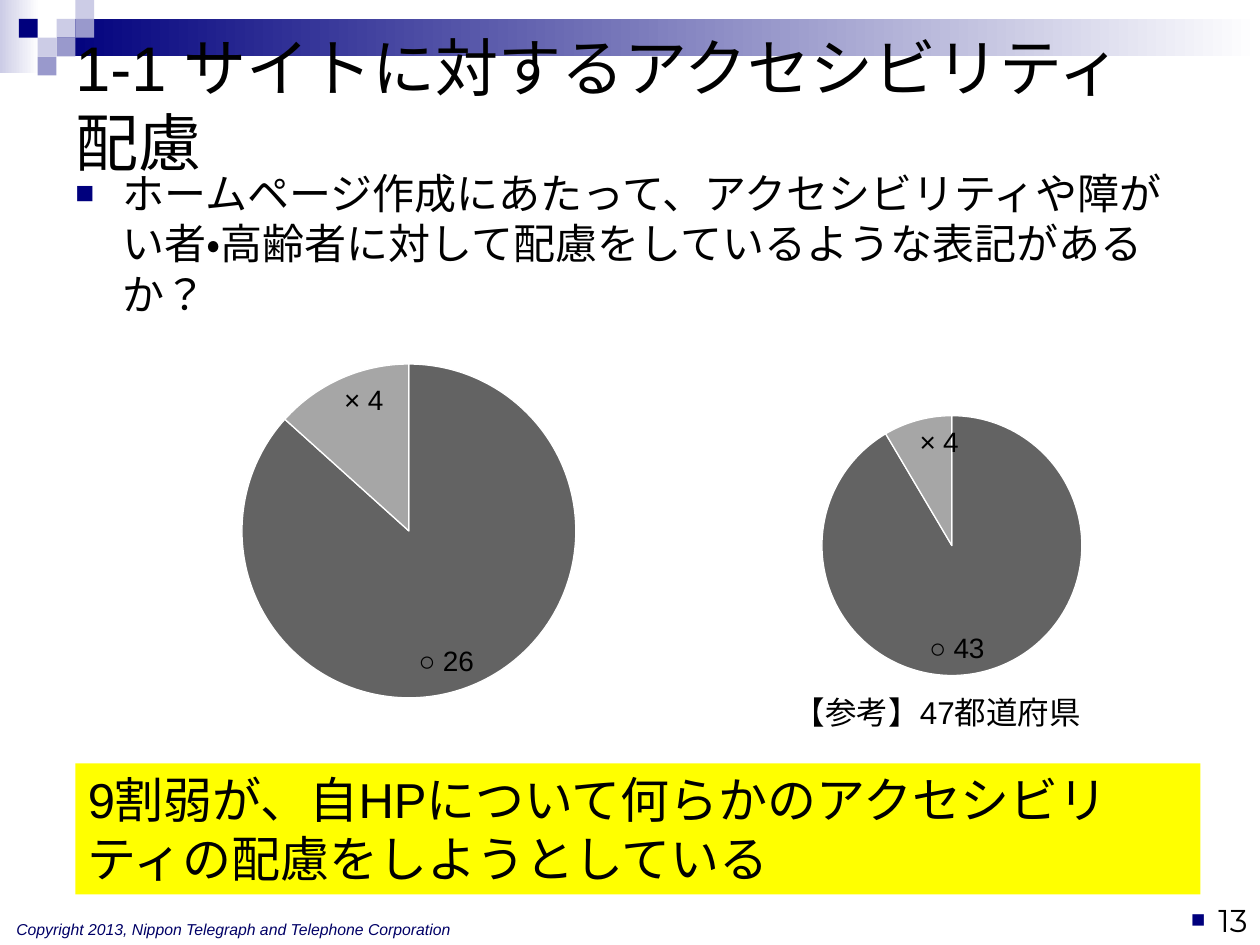
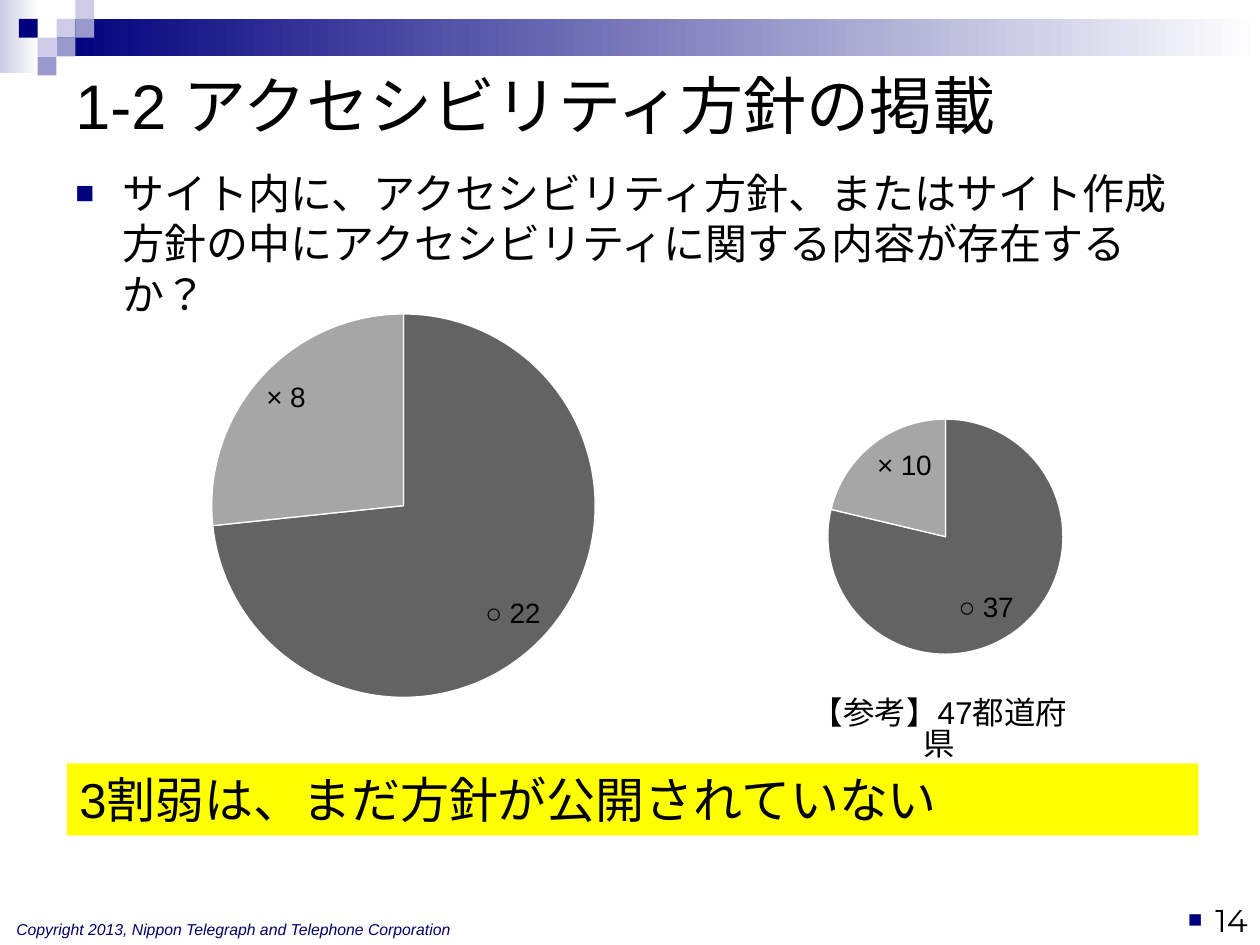
from lxml import etree
from pptx import Presentation
from pptx.chart.data import CategoryChartData
from pptx.dml.color import RGBColor
from pptx.enum.chart import XL_CHART_TYPE, XL_LABEL_POSITION
from pptx.enum.lang import MSO_LANGUAGE_ID
from pptx.enum.shapes import MSO_SHAPE
from pptx.enum.text import MSO_ANCHOR, PP_ALIGN
from pptx.oxml.ns import qn
from pptx.util import Cm, Pt

PIE = XL_CHART_TYPE.PIE
INSIDE_END = XL_LABEL_POSITION.INSIDE_END
JAPANESE = MSO_LANGUAGE_ID.JAPANESE
RECTANGLE = MSO_SHAPE.RECTANGLE
TOP, MIDDLE, BOTTOM = MSO_ANCHOR.TOP, MSO_ANCHOR.MIDDLE, MSO_ANCHOR.BOTTOM
LEFT, CENTER, RIGHT = PP_ALIGN.LEFT, PP_ALIGN.CENTER, PP_ALIGN.RIGHT

COLORS = {
    "black": "000000", "white": "FFFFFF", "navy": "00007D", "copyright": "000066",
    "violet": "9999CC", "pale": "CCCCE6", "yellow": "FFFF00",
    "yes": "636363", "no": "A6A6A6",
}
FORMATS = {
    "title": {"size": Pt(36), "name": "Arial", "language_id": JAPANESE},
    "question": {"size": Pt(24), "name": "Arial", "language_id": JAPANESE},
    "finding": {"size": Pt(28), "name": "Arial", "language_id": JAPANESE},
    "caption": {"size": Pt(18), "name": "Arial", "language_id": JAPANESE},
    "copyright": {"size": Pt(9), "name": "Arial", "italic": True},
    "number": {"size": Pt(18), "name": "Montserrat"},
    "label": {"size": Pt(16), "name": "Arial"},
}
COPYRIGHT = "Copyright 2013, Nippon Telegraph and Telephone Corporation"
CAPTION = "【参考】47都道府県"

# Corner mosaic: column, row, colour
TILE = 0.38
TILES = [(3, 1, "pale"), (4, 0, "pale"), (4, 1, "violet"), (2, 2, "pale"),
         (1, 1, "navy"), (3, 2, "violet"), (2, 3, "violet")]

# Boxes are left, top, width, height in cm; pies are left, top, diameter
SLIDES = [
    {"number": 13,
     "title": "1-1 サイトに対するアクセシビリティ配慮",
     "question": "ホームページ作成にあたって、アクセシビリティや障がい者・高齢者に対して配慮をしているような表記があるか？",
     "finding": "9割弱が、自HPについて何らかのアクセシビリティの配慮をしようとしている",
     "finding_box": (1.52, 15.39, 22.68, 2.64),
     "caption_box": (15.57, 14, 6.65, 0.86),
     "charts": [((14.22, 7.32, 9.93, 6.68), (16.57, 8.38, 5.24), (43, 4)),
                ((1.22, 6.38, 14.02, 8.05), (4.88, 7.34, 6.73), (26, 4))]},
    {"number": 14,
     "title": "1-2 アクセシビリティ方針の掲載",
     "question": "サイト内に、アクセシビリティ方針、またはサイト作成方針の中にアクセシビリティに関する内容が存在するか？",
     "finding": "3割弱は、まだ方針が公開されていない",
     "finding_box": (1.35, 15.39, 22.81, 1.45),
     "caption_box": (15.85, 14, 6.17, 0.86),
     "charts": [((14.12, 7.65, 9.91, 6.35), (16.69, 8.45, 4.74), (37, 10)),
                ((1.35, 5.97, 13.56, 8.46), (4.27, 6.33, 7.73), (22, 8))]},
]


def color(name):
    return RGBColor.from_string(COLORS[name])


def lengths(box):
    return [Cm(value) for value in box]


def add_element(parent, tag, **attributes):
    return etree.SubElement(parent, qn(tag), attributes)


class SurveyDeck:
    def __init__(self):
        self.deck = Presentation()
        self.deck.slide_width, self.deck.slide_height = Cm(25.4), Cm(19.05)
        self.page = None

    def new_page(self):
        self.page = self.deck.slides.add_slide(self.deck.slide_layouts[6])

    def style(self, font, kind, color_name="black"):
        for attribute, value in FORMATS[kind].items():
            setattr(font, attribute, value)
        font.color.rgb = color(color_name)

    def rectangle(self, box, fill, fade=False):
        shape = self.page.shapes.add_shape(RECTANGLE, *lengths(box))
        shape.shadow.inherit = False
        shape.line.fill.background()
        if fade:
            shape.fill.gradient()
            shape.fill.gradient_angle = 0
            for stop, name in zip(shape.fill.gradient_stops, (fill, "white")):
                stop.color.rgb = color(name)
        else:
            shape.fill.solid()
            shape.fill.fore_color.rgb = color(fill)
        return shape

    def fill_text(self, shape, text, kind, color_name="black", align=LEFT, anchor=TOP):
        frame = shape.text_frame
        frame.word_wrap = True
        frame.vertical_anchor = anchor
        para = frame.paragraphs[0]
        para.alignment = align
        span = para.add_run()
        span.text = text
        self.style(span.font, kind, color_name)
        return para

    def text(self, box, *content, **options):
        shape = self.page.shapes.add_textbox(*lengths(box))
        return self.fill_text(shape, *content, **options)

    def bullet(self, para, indent):
        properties = para._p.get_or_add_pPr()
        properties.set("marL", str(Cm(indent)))
        properties.set("indent", str(-Cm(indent)))
        add_element(add_element(properties, "a:buClr"), "a:srgbClr", val=COLORS["navy"])
        add_element(properties, "a:buSzPct", val="75000")
        add_element(properties, "a:buFont", typeface="Arial")
        add_element(properties, "a:buChar", char="■")

    def pie(self, box, circle, values):
        data = CategoryChartData()
        data.categories = ["○", "×"]
        data.add_series("Series 1", values)
        chart = self.page.shapes.add_chart(PIE, *lengths(box), data).chart
        chart.has_title = chart.has_legend = False
        self.style(chart.font, "label")
        plot = chart.plots[0]
        plot.vary_by_categories = True
        for index, name in enumerate(("yes", "no")):
            wedge = plot.series[0].points[index].format
            wedge.fill.solid()
            wedge.fill.fore_color.rgb = color(name)
            wedge.line.color.rgb = color("white")
            wedge.line.width = Pt(0.75)

        # Labels: category and value, parted by a space
        plot.has_data_labels = True
        labels = plot.data_labels
        labels.show_value = labels.show_category_name = True
        labels.show_percentage = False
        labels.position = INSIDE_END
        self.style(labels.font, "label")
        separator = etree.Element(qn("c:separator"))
        separator.text = " "
        labels._element.find(qn("c:showBubbleSize")).addnext(separator)
        self.place_circle(chart, box, circle)

    def place_circle(self, chart, box, circle):
        left, top, width, height = box
        x, y, diameter = circle
        area = chart._chartSpace.chart.plotArea
        for old in area.findall(qn("c:layout")):
            area.remove(old)
        layout = etree.Element(qn("c:layout"))
        area.insert(0, layout)
        manual = add_element(layout, "c:manualLayout")
        add_element(manual, "c:layoutTarget", val="inner")
        for tag in ("c:xMode", "c:yMode"):
            add_element(manual, tag, val="edge")
        shares = {"c:x": (x - left) / width, "c:y": (y - top) / height,
                  "c:w": diameter / width, "c:h": diameter / height}
        for tag, share in shares.items():
            add_element(manual, tag, val=f"{share:.4f}")

    def frame(self, number):
        # Header band and mosaic
        self.rectangle((0, 0, 0.79, 1.47), "pale", fade=True)
        self.rectangle((3 * TILE, TILE, 25.4 - 3 * TILE, 2 * TILE), "navy", fade=True)
        for column, row, fill in TILES:
            self.rectangle((column * TILE, row * TILE, TILE, TILE), fill)
        # Footer
        self.text((0.08, 18.42, 10.26, 0.61), COPYRIGHT, "copyright", "copyright")
        para = self.text((19.48, 17.78, 5.92, 1.27), str(number), "number",
                         align=RIGHT, anchor=BOTTOM)
        self.bullet(para, 0.55)

    def survey_page(self, content):
        self.new_page()
        self.frame(content["number"])
        # Title and question
        self.text((1.27, 1.17, 22.68, 1.85), content["title"], "title", anchor=MIDDLE)
        question = self.text((1.27, 3.25, 22.86, 15.8), content["question"], "question")
        self.bullet(question, 0.95)
        # Caption of the reference pie
        caption = self.text(content["caption_box"], CAPTION, "caption", align=CENTER)
        caption.line_spacing = 0.8
        # Finding
        banner = self.rectangle(content["finding_box"], "yellow")
        self.fill_text(banner, content["finding"], "finding")
        # Results
        for chart in content["charts"]:
            self.pie(*chart)


def main():
    survey = SurveyDeck()
    for content in SLIDES:
        survey.survey_page(content)
    survey.deck.save("out.pptx")


if __name__ == "__main__":
    main()
